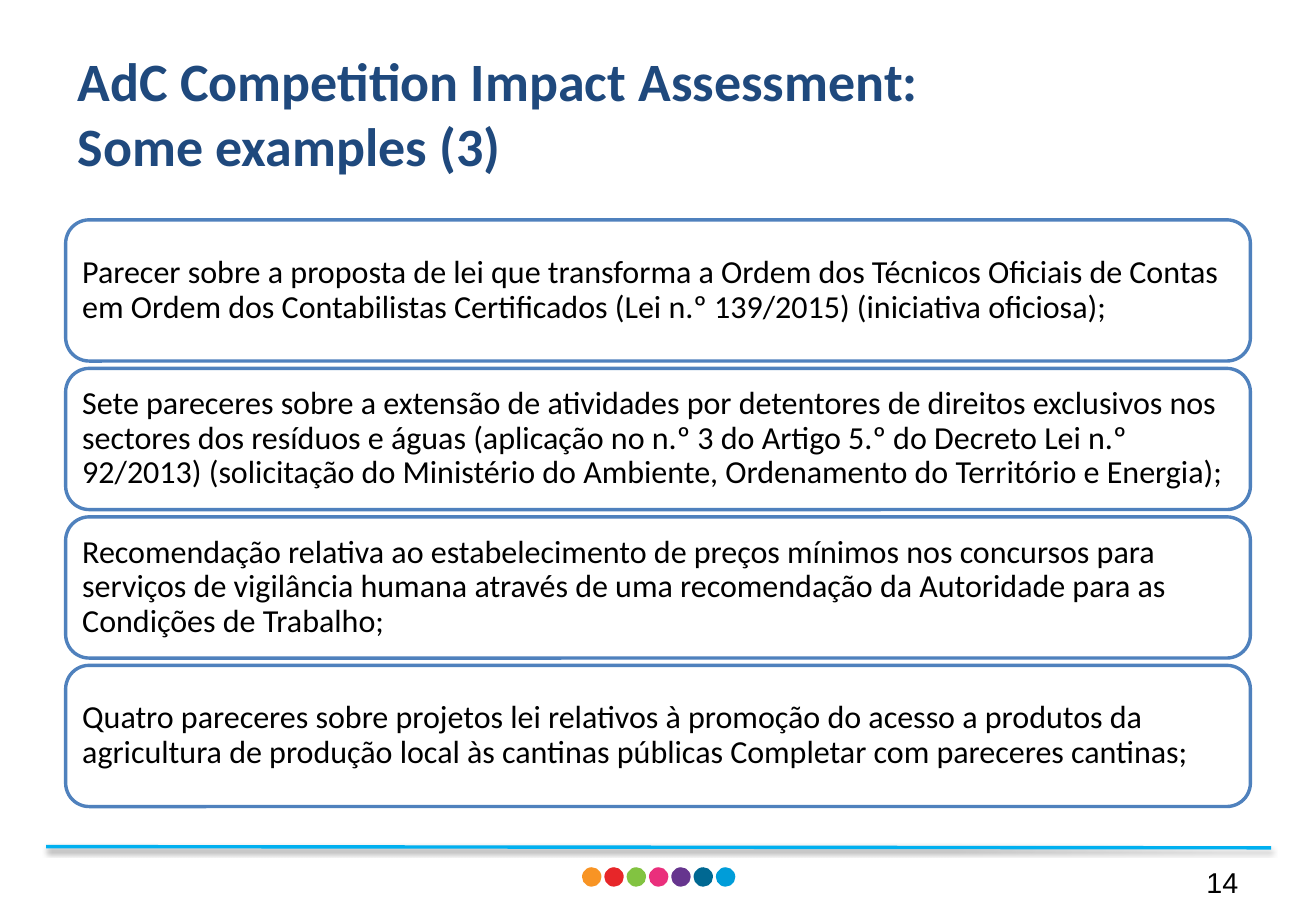
from lxml.etree import SubElement
from pptx import Presentation
from pptx.dml.color import RGBColor
from pptx.enum.shapes import MSO_CONNECTOR, MSO_SHAPE
from pptx.enum.text import MSO_ANCHOR, PP_ALIGN
from pptx.oxml.ns import qn
from pptx.util import Inches, Pt

CARDS = [
    "Parecer sobre a proposta de lei que transforma a Ordem dos Técnicos Oficiais de Contas "
    "em Ordem dos Contabilistas Certificados (Lei n.º 139/2015) (iniciativa oficiosa);",
    "Sete pareceres sobre a extensão de atividades por detentores de direitos exclusivos nos "
    "sectores dos resíduos e águas (aplicação no n.º 3 do Artigo 5.º do Decreto Lei n.º "
    "92/2013) (solicitação do Ministério do Ambiente, Ordenamento do Território e Energia);",
    "Recomendação relativa ao estabelecimento de preços mínimos nos concursos para "
    "serviços de vigilância humana através de uma recomendação da Autoridade para as "
    "Condições de Trabalho;",
    "Quatro pareceres sobre projetos lei relativos à promoção do acesso a produtos da "
    "agricultura de produção local às cantinas públicas Completar com pareceres cantinas;",
]
DOTS = ["F89424", "E72629", "82C341", "EA2F7C", "66358E", "006892", "009DD9"]
TITLE = {"name": "Calibri", "size": Pt(32), "bold": True}
BODY = {"name": "Calibri", "size": Pt(19)}
PAGE = {"name": "Arial", "size": Pt(17)}


def color(target, code):
    """Give a font or line colour from a hex string."""
    target.color.rgb = RGBColor.from_string(code)


def write(shape, text, style, code="000000", align=PP_ALIGN.LEFT, inset=None):
    """Write one styled paragraph, centred vertically, into a shape."""
    frame = shape.text_frame
    frame.word_wrap = True
    frame.vertical_anchor = MSO_ANCHOR.MIDDLE
    if inset is not None:
        for side in ("left", "top", "right", "bottom"):
            setattr(frame, f"margin_{side}", Inches(inset))
    para = frame.paragraphs[0]
    para.text = text
    para.alignment = align
    for run in para.runs:
        for key, value in style.items():
            setattr(run.font, key, value)
        color(run.font, code)
    return para


def shape(slide, kind, box, fill):
    """Add a flat filled shape without an outline."""
    item = slide.shapes.add_shape(kind, *map(Inches, box))
    item.shadow.inherit = False
    item.fill.solid()
    item.fill.fore_color.rgb = RGBColor.from_string(fill)
    item.line.fill.background()
    return item


def title(slide, box, text):
    """Place the slide title."""
    item = slide.shapes.add_textbox(*map(Inches, box))
    write(item, text, TITLE, "1F497D")


def cards(slide, box, texts, gap=0.06):
    """Stack equal rounded cards inside the box."""
    left, top, width, height = box
    step = (height + gap) / len(texts)
    for row, text in enumerate(texts):
        place = (left, top + row * step, width, step - gap)
        card = shape(slide, MSO_SHAPE.ROUNDED_RECTANGLE, place, "FFFFFF")
        color(card.line, "4F81BD")
        card.line.width = Pt(2)
        write(card, text, BODY, inset=0.08).line_spacing = 0.9


def rule(slide, box):
    """Draw the footer line with its soft shadow."""
    left, top, width, height = box
    ends = (left, top, left + width, top + height)
    line = slide.shapes.add_connector(MSO_CONNECTOR.STRAIGHT, *map(Inches, ends))
    color(line.line, "00B0F0")
    line.line.width = Pt(2)
    effect = SubElement(line._element.spPr, qn("a:effectLst"))
    shadow = SubElement(effect, qn("a:outerShdw"), blurRad=str(Pt(3.1)),
                        dist=str(Pt(1.6)), dir="5400000", rotWithShape="0")
    tint = SubElement(shadow, qn("a:srgbClr"), val="000000")
    SubElement(tint, qn("a:alpha"), val="38000")


def footer(slide, box, number):
    """Place the line, the row of dots and the page number."""
    left, top, width, height = box
    rule(slide, (left, top, width, 0.01))
    size, step = 0.16, 0.18
    start = left + 4.41
    for col, code in enumerate(DOTS):
        place = (start + col * step * 1.02, top + 0.17, size, size)
        shape(slide, MSO_SHAPE.OVAL, place, code)
    page = (left + width - 2.7, top + 0.09, 2.53, height - 0.09)
    item = slide.shapes.add_textbox(*map(Inches, page))
    write(item, number, PAGE, align=PP_ALIGN.RIGHT)


def main():
    """Build and save the slide."""
    deck = Presentation()
    deck.slide_width, deck.slide_height = Inches(10.83), Inches(7.5)
    slide = deck.slides.add_slide(deck.slide_layouts[6])
    title(slide, (0.54, 0.3, 7.22, 1.25),
          "AdC Competition Impact Assessment:\vSome examples (3)")
    cards(slide, (0.54, 1.81, 9.75, 4.83), CARDS)
    footer(slide, (0.38, 6.97, 10.08, 0.49), "14")
    deck.save("out.pptx")


if __name__ == "__main__":
    main()
